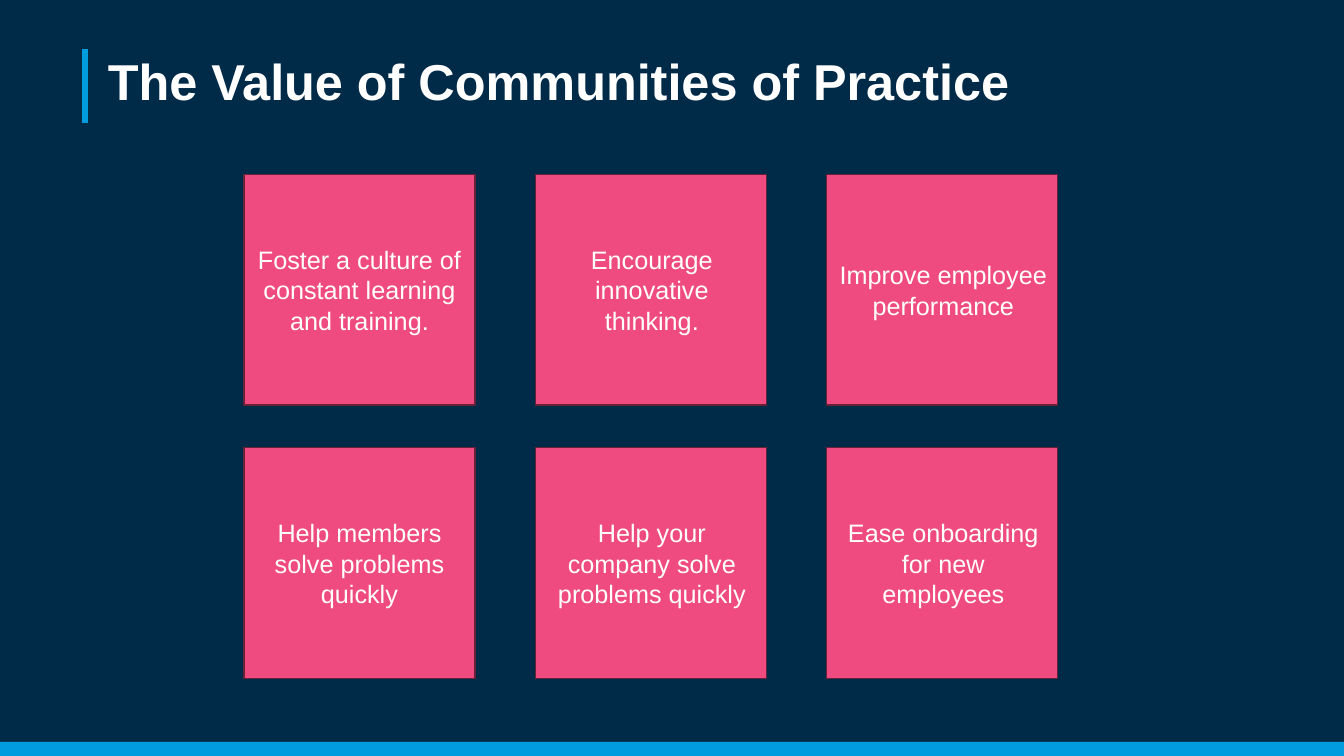
from pptx import Presentation
from pptx.dml.color import RGBColor
from pptx.enum import shapes, text
from pptx.oxml.ns import qn
from pptx.util import Inches, Pt
from lxml import etree

NAVY = RGBColor(0x00, 0x2B, 0x48)
BLUE = RGBColor(0x00, 0x9C, 0xDE)
PINK = RGBColor(0xEF, 0x4B, 0x80)
MAROON = RGBColor(0x69, 0x21, 0x38)
WHITE = RGBColor(0xFF, 0xFF, 0xFF)

SLIDE_W, SLIDE_H = 13.33, 7.5
CARD_SIZE = 2.29
CARD_LEFT, CARD_TOP = 2.42, 1.73
COLUMN_STEP, ROW_STEP = 2.89, 2.71
COLUMNS = 3
BENEFITS = [
    "Foster a culture of constant learning and training.",
    "Encourage innovative thinking.",
    "Improve employee performance",
    "Help members solve problems quickly",
    "Help your company solve problems quickly",
    "Ease onboarding for new employees",
]


def write(tf, words, paragraph_format, font_format):
    tf.word_wrap = True
    p = tf.paragraphs[0]
    r = p.add_run()
    r.text = words
    for name, value in paragraph_format.items():
        setattr(p, name, value)
    for name, value in font_format.items():
        setattr(r.font, name, value)
    r.font.color.rgb = WHITE
    return p


def add_rect(s, left, top, width, height, fill):
    sp = s.shapes.add_shape(shapes.MSO_SHAPE.RECTANGLE, Inches(left),
                            Inches(top), Inches(width), Inches(height))
    sp.shadow.inherit = False
    sp.fill.solid()
    sp.fill.fore_color.rgb = fill
    sp.line.fill.background()
    return sp


def add_accent_line(s, x, top, bottom):
    line = s.shapes.add_connector(shapes.MSO_CONNECTOR.STRAIGHT, Inches(x),
                                  Inches(top), Inches(x), Inches(bottom))
    line.line.color.rgb = BLUE
    line.line.width = Pt(4.5)
    etree.SubElement(line._element.spPr, qn("a:effectLst"))


def add_title(s, words):
    tf = s.shapes.add_textbox(Inches(1.07), Inches(0.57),
                              Inches(11.35), Inches(0.73)).text_frame
    for side in ("left", "top", "right", "bottom"):
        setattr(tf, f"margin_{side}", 0)
    write(tf, words, {"line_spacing": Pt(38)},
          {"name": "Arial", "size": Pt(36), "bold": True})


def add_card(s, index, words):
    row, column = divmod(index, COLUMNS)
    sp = add_rect(s, CARD_LEFT + column * COLUMN_STEP,
                  CARD_TOP + row * ROW_STEP, CARD_SIZE, CARD_SIZE, PINK)
    sp.line.color.rgb = MAROON
    sp.line.width = Pt(1)
    tf = sp.text_frame
    tf.vertical_anchor = text.MSO_ANCHOR.MIDDLE
    p = write(tf, words, {"alignment": text.PP_ALIGN.CENTER},
              {"name": "Arial", "size": Pt(18)})
    if column > 0:
        p._p.get_or_add_pPr().set("marL", str(Inches(0.02)))


def main():
    prs = Presentation()
    prs.slide_width, prs.slide_height = Inches(SLIDE_W), Inches(SLIDE_H)
    s = prs.slides.add_slide(prs.slide_layouts[6])
    add_rect(s, 0, 0, SLIDE_W, SLIDE_H, NAVY)
    add_accent_line(s, 0.84, 0.49, 1.22)
    add_rect(s, 0, 7.36, SLIDE_W, 0.14, BLUE)
    add_title(s, "The Value of Communities of Practice")
    for index, words in enumerate(BENEFITS):
        add_card(s, index, words)
    prs.save("out.pptx")


if __name__ == "__main__":
    main()
